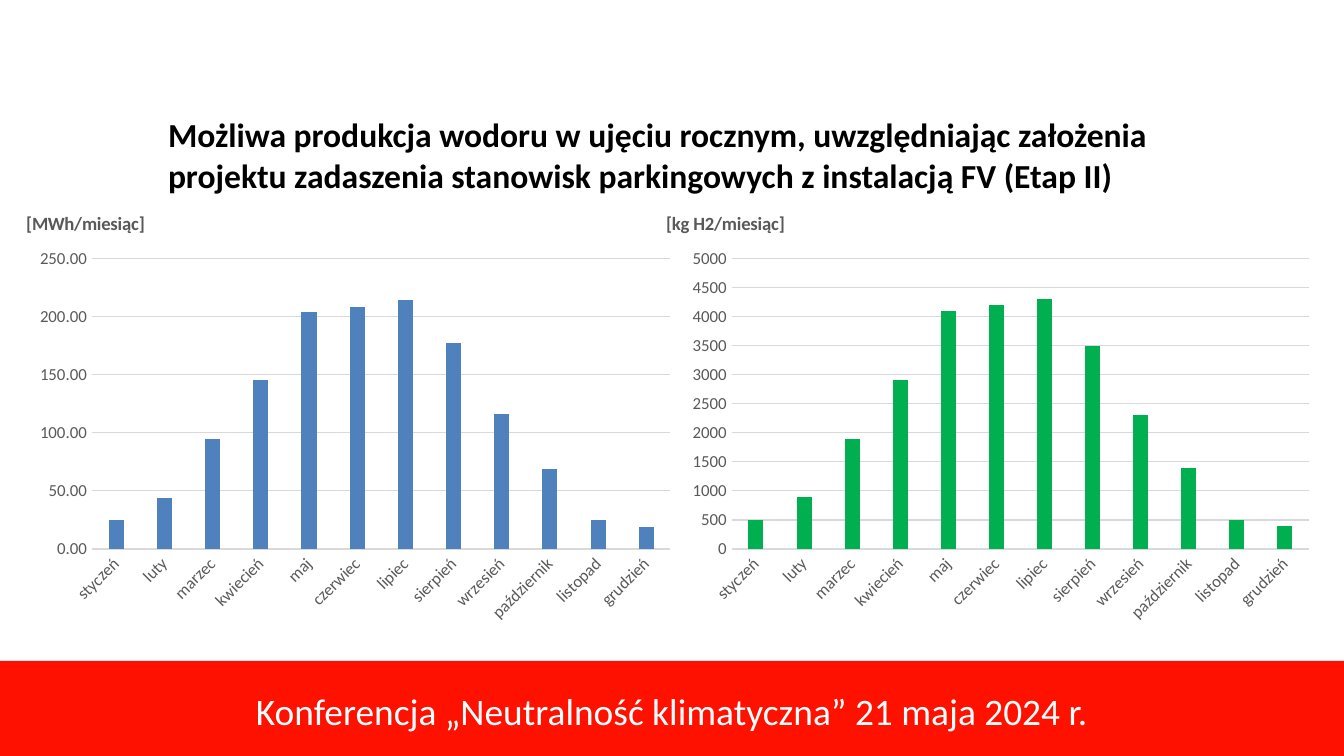
import pptx
import pptx.chart.data
import pptx.dml.color
import pptx.enum.chart
import pptx.enum.shapes
import pptx.enum.text
import pptx.oxml
import pptx.oxml.ns
import pptx.util

Pt = pptx.util.Pt
FONT = "Calibri"
COLORS = {
    "banner": "FF1100",
    "title": "000000",
    "footer": "FFFFFF",
    "label": "595959",
    "grid": "D9D9D9",
    "energy": "4F81BD",
    "hydrogen": "00B050",
}
MONTHS = ["styczeń", "luty", "marzec", "kwiecień", "maj", "czerwiec", "lipiec",
          "sierpień", "wrzesień", "październik", "listopad", "grudzień"]
ENERGY = [25, 44, 95, 145, 204, 208, 214, 177, 116, 69, 25, 19]
HYDROGEN = [500, 900, 1900, 2900, 4100, 4200, 4300, 3500, 2300, 1400, 500, 400]


def rgb(name):
    return pptx.dml.color.RGBColor.from_string(COLORS[name])


def format_font(font, size, color, bold=False):
    font.name = FONT
    font.size = Pt(size)
    font.bold = bold
    font.color.rgb = rgb(color)


def fill_text(frame, text, size, color, align, anchor, bold=False):
    frame.text = text
    frame.word_wrap = True
    frame.vertical_anchor = anchor
    para = frame.paragraphs[0]
    para.alignment = align
    format_font(para.runs[0].font, size, color, bold)


def place_title(page, text):
    title = page.shapes.title
    title.left, title.top, title.width, title.height = Pt(90), Pt(61.2), Pt(566.6), Pt(62)
    frame = title.text_frame
    frame.margin_left = frame.margin_right = frame.margin_top = frame.margin_bottom = 0
    fill_text(frame, text, 18, "title", pptx.enum.text.PP_ALIGN.LEFT,
              pptx.enum.text.MSO_ANCHOR.TOP, True)
    frame.auto_size = pptx.enum.text.MSO_AUTO_SIZE.NONE


def add_footer(page, text):
    banner = page.shapes.add_shape(pptx.enum.shapes.MSO_SHAPE.RECTANGLE,
                                   0, Pt(354), Pt(720), Pt(51))
    banner.shadow.inherit = False
    banner.fill.solid()
    banner.fill.fore_color.rgb = rgb("banner")
    banner.line.fill.background()
    box = page.shapes.add_textbox(Pt(126.5), Pt(355), Pt(467), Pt(51))
    fill_text(box.text_frame, text, 20, "footer", pptx.enum.text.PP_ALIGN.CENTER,
              pptx.enum.text.MSO_ANCHOR.MIDDLE)


def set_layout(parent, position, **places):
    for old in parent.xpath("./c:layout"):
        parent.remove(old)
    modes = "".join(f'<c:{key}Mode val="edge"/>' for key in ("x", "y"))
    values = "".join(f'<c:{key} val="{value}"/>' for key, value in places.items())
    target = '<c:layoutTarget val="inner"/>' if "w" in places else ""
    parent.insert(position, pptx.oxml.parse_xml(
        f'<c:layout {pptx.oxml.ns.nsdecls("c")}><c:manualLayout>'
        f"{target}{modes}{values}</c:manualLayout></c:layout>"))


def format_axis(axis, line):
    axis.major_tick_mark = axis.minor_tick_mark = pptx.enum.chart.XL_TICK_MARK.NONE
    format_font(axis.tick_labels.font, 9, "label")
    line.color.rgb = rgb("grid")
    line.width = Pt(0.75)


def add_month_chart(page, left, width, unit, values, color, top_value, step, number_format):
    data = pptx.chart.data.CategoryChartData()
    data.categories = MONTHS
    data.add_series("Series 1", values)
    chart = page.shapes.add_chart(pptx.enum.chart.XL_CHART_TYPE.COLUMN_CLUSTERED,
                                  Pt(left), Pt(101.5), Pt(width), Pt(242), data).chart
    chart.has_title = False
    chart.has_legend = False
    format_font(chart.font, 10, "title")

    plot = chart.plots[0]
    plot.gap_width = 219
    plot.overlap = -27
    plot.vary_by_categories = False
    fill = plot.series[0].format.fill
    fill.solid()
    fill.fore_color.rgb = rgb(color)

    format_axis(chart.category_axis, chart.category_axis.format.line)
    axis = chart.value_axis
    axis.has_major_gridlines = True
    format_axis(axis, axis.major_gridlines.format.line)
    axis.format.line.fill.background()
    axis.minimum_scale, axis.maximum_scale, axis.major_unit = 0, top_value, step
    axis.tick_labels.number_format = number_format
    axis.tick_labels.number_format_is_linked = False

    frame = axis.axis_title.text_frame
    frame.text = unit
    format_font(frame.paragraphs[0].runs[0].font, 10, "label", True)
    root = chart.element
    root.xpath(".//c:valAx/c:title//a:bodyPr")[0].set("rot", "0")
    root.xpath(".//c:catAx/c:txPr/a:bodyPr")[0].set("rot", "-2700000")
    set_layout(root.xpath(".//c:valAx/c:title")[0], 1, x=0.01, y=0.04)
    set_layout(root.xpath(".//c:plotArea")[0], 0, x=0.113, y=0.153, w=0.859, h=0.643)


def main():
    deck = pptx.Presentation()
    deck.slide_width, deck.slide_height = Pt(720), Pt(405)
    page = deck.slides.add_slide(deck.slide_layouts[5])
    place_title(page, "Możliwa produkcja wodoru w ujęciu rocznym, uwzględniając założenia "
                      "projektu zadaszenia stanowisk parkingowych z instalacją FV (Etap II)")
    add_month_chart(page, 8.6, 360.7, "[MWh/miesiąc]", ENERGY, "energy", 250, 50, "0.00")
    add_month_chart(page, 351.4, 360, "[kg H2/miesiąc]", HYDROGEN, "hydrogen", 5000, 500, "General")
    add_footer(page, "Konferencja „Neutralność klimatyczna” 21 maja 2024 r.")
    deck.save("out.pptx")


if __name__ == "__main__":
    main()
